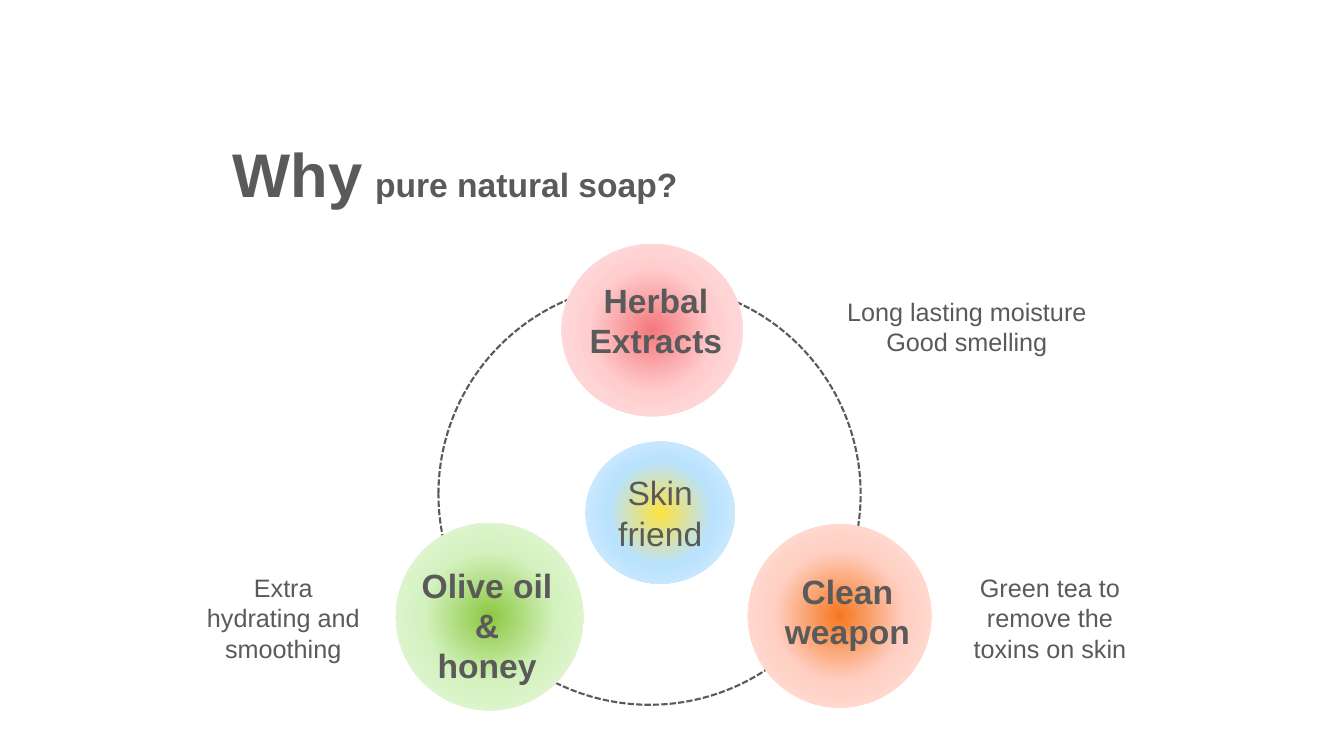
"""Build the slide on why to choose pure natural soap."""
from typing import NamedTuple

import lxml.etree
import pptx
import pptx.dml.color
import pptx.enum.dml
import pptx.enum.shapes
import pptx.enum.text
import pptx.oxml.ns
import pptx.util

Cm = pptx.util.Cm
RGBColor = pptx.dml.color.RGBColor
Align = pptx.enum.text.PP_ALIGN
Anchor = pptx.enum.text.MSO_ANCHOR

GREY = RGBColor(0x5A, 0x5A, 0x5A)
GREENS = (RGBColor(0x8C, 0xC8, 0x41), RGBColor(0xD4, 0xF2, 0xBF), RGBColor(0xEA, 0xF8, 0xE0))
REDS = (RGBColor(0xF5, 0x78, 0x7D), RGBColor(0xFF, 0xCD, 0xCE), RGBColor(0xFF, 0xE6, 0xE7))
ORANGES = (RGBColor(0xF5, 0x78, 0x20), RGBColor(0xFF, 0xCF, 0xC2), RGBColor(0xFF, 0xE7, 0xE1))
BLUES = (RGBColor(0xFF, 0xE2, 0x41), RGBColor(0xB9, 0xE2, 0xFE), RGBColor(0xDD, 0xF0, 0xFE))


class Box(NamedTuple):
    left: float
    top: float
    width: float
    height: float

    def lengths(self) -> list:
        return [Cm(value) for value in self]


class Bubble(NamedTuple):
    box: Box
    colors: tuple


class Label(NamedTuple):
    box: Box
    lines: tuple
    size: int = 18
    bold: bool = False


RING = Box(11.05, 7.14, 10.64, 10.62)
TITLE = Box(5.61, 3.38, 20.04, 3.18)
CENTRE = Bubble(Box(14.76, 11.13, 3.76, 3.58), BLUES)
BUBBLES = (
    Bubble(Box(9.98, 13.18, 4.72, 4.72), GREENS),
    Bubble(Box(14.15, 6.15, 4.57, 4.34), REDS),
    Bubble(Box(18.85, 13.21, 4.62, 4.62), ORANGES),
)
LABELS = (
    Label(Box(4.83, 14.3, 4.62, 2.57), ("Extra hydrating and", "smoothing")),
    Label(Box(20.9, 7.34, 6.93, 1.8), ("Long lasting moisture", "Good smelling")),
    Label(Box(14.55, 6.93, 3.96, 2.31), ("Herbal Extracts",), 24, True),
    Label(Box(19.02, 14.25, 4.67, 2.31), ("Clean weapon",), 24, True),
    Label(Box(10.19, 14.1, 4.17, 3.33), ("Olive oil &", "honey"), 24, True),
    Label(Box(23.88, 14.3, 5.16, 2.57), ("Green tea to remove the toxins on skin",)),
)


def add_run(p, text: str, *, size: int, bold: bool = False) -> None:
    r = p.add_run()
    r.text = text
    r.font.name = "Arial"
    r.font.size = pptx.util.Pt(size)
    r.font.bold = bold
    r.font.color.rgb = GREY


def write_lines(tf, lines: tuple, *, size: int, bold: bool = False) -> None:
    tf.word_wrap = True
    for i, line in enumerate(lines):
        p = tf.add_paragraph() if i else tf.paragraphs[0]
        p.alignment = Align.CENTER
        add_run(p, line, size=size, bold=bold)


def add_ellipse(s, box: Box):
    sp = s.shapes.add_shape(pptx.enum.shapes.MSO_SHAPE.OVAL, *box.lengths())
    sp.shadow.inherit = False
    return sp


def add_ring(s, box: Box) -> None:
    sp = add_ellipse(s, box)
    sp.fill.background()
    sp.line.color.rgb = GREY
    sp.line.width = pptx.util.Pt(1.5)
    sp.line.dash_style = pptx.enum.dml.MSO_LINE.SQUARE_DOT


def add_bubble(s, bubble: Bubble):
    qn = pptx.oxml.ns.qn
    sp = add_ellipse(s, bubble.box)
    sp.line.fill.background()
    sp.fill.gradient()
    grad = sp.element.spPr.find(qn("a:gradFill"))
    for child in list(grad):
        grad.remove(child)
    stops = lxml.etree.SubElement(grad, qn("a:gsLst"))
    for i, color in enumerate(bubble.colors):
        stop = lxml.etree.SubElement(stops, qn("a:gs"), pos=str(i * 50000))
        lxml.etree.SubElement(stop, qn("a:srgbClr"), val=str(color))
    circle = lxml.etree.SubElement(grad, qn("a:path"), {"path": "circle"})
    lxml.etree.SubElement(circle, qn("a:fillToRect"), dict.fromkeys("ltrb", "50000"))
    return sp


def add_label(s, label: Label) -> None:
    tf = s.shapes.add_textbox(*label.box.lengths()).text_frame
    write_lines(tf, label.lines, size=label.size, bold=label.bold)
    tf.auto_size = pptx.enum.text.MSO_AUTO_SIZE.SHAPE_TO_FIT_TEXT


def add_title(s, box: Box) -> None:
    tf = s.shapes.add_textbox(*box.lengths()).text_frame
    tf.word_wrap = True
    tf.margin_top = Cm(0.25)
    p = tf.paragraphs[0]
    p.line_spacing = 0.9
    for text, size in (("Why", 44), (" ", 32), ("pure natural soap?", 24)):
        add_run(p, text, size=size, bold=True)


def main() -> None:
    prs = pptx.Presentation()
    prs.slide_width, prs.slide_height = Cm(33.87), Cm(19.05)
    s = prs.slides.add_slide(prs.slide_layouts[6])
    add_title(s, TITLE)
    add_ring(s, RING)
    for bubble in BUBBLES:
        add_bubble(s, bubble)
    for label in LABELS:
        add_label(s, label)
    tf = add_bubble(s, CENTRE).text_frame
    tf.vertical_anchor = Anchor.MIDDLE
    write_lines(tf, ("Skin friend",), size=24)
    prs.save("out.pptx")


if __name__ == "__main__":
    main()
